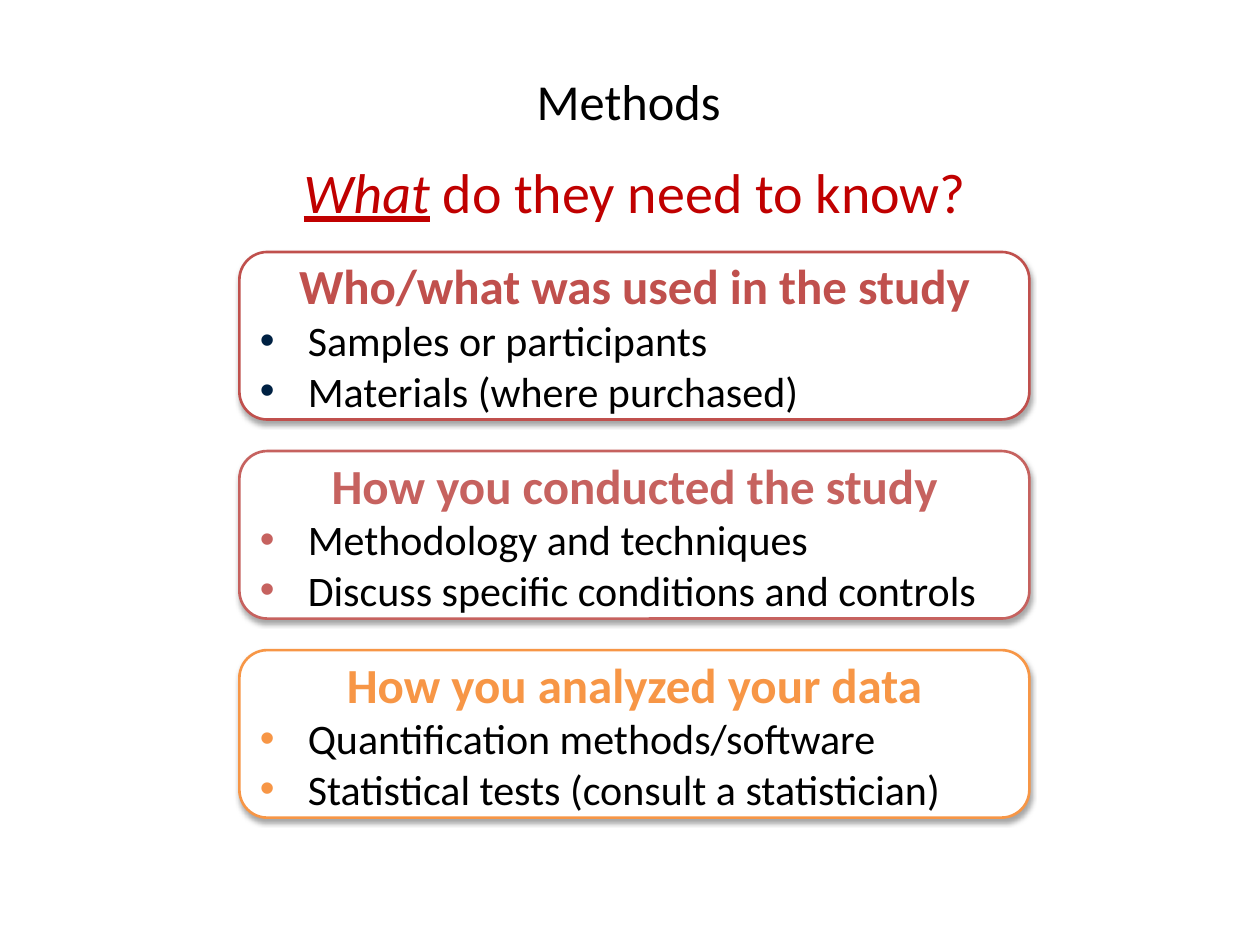
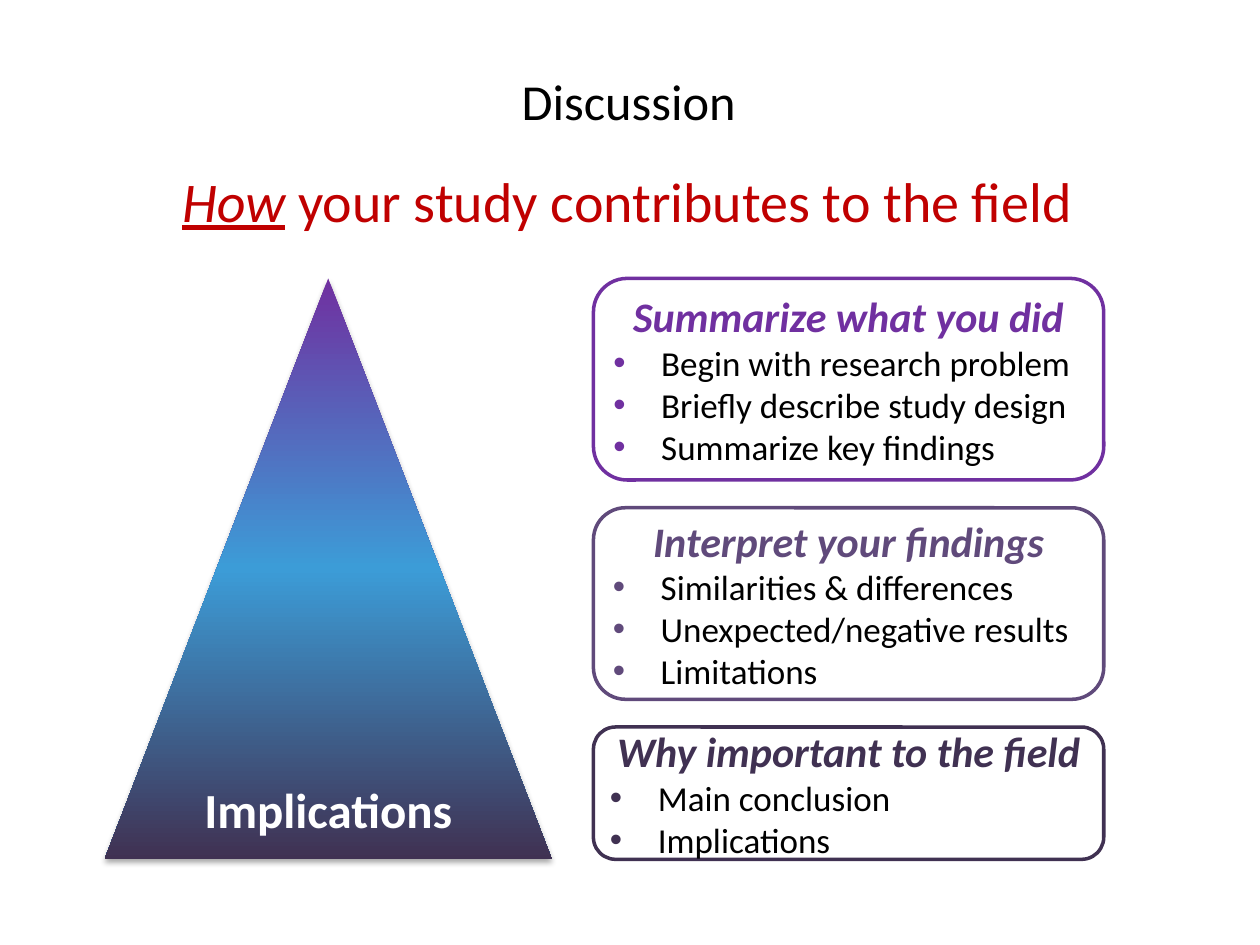
from lxml import etree
from pptx import Presentation
from pptx.dml.color import RGBColor
from pptx.enum.shapes import MSO_SHAPE
from pptx.enum.text import MSO_ANCHOR, PP_ALIGN
from pptx.oxml import parse_xml
from pptx.oxml.ns import nsdecls, qn
from pptx.util import Emu, Inches, Pt

FONT = "Calibri"
BLACK = RGBColor(0x00, 0x00, 0x00)
WHITE = RGBColor(0xFF, 0xFF, 0xFF)
CRIMSON = RGBColor(0xC0, 0x00, 0x00)
NAVY = RGBColor(0x00, 0x21, 0x43)
BRICK = RGBColor(0xC0, 0x50, 0x4D)
ROSE = RGBColor(0xC6, 0x62, 0x5F)
ORANGE = RGBColor(0xF7, 0x96, 0x46)
PURPLE = RGBColor(0x70, 0x30, 0xA0)
SKY = RGBColor(0x3C, 0x9C, 0xD7)
VIOLET = RGBColor(0x60, 0x4A, 0x7B)
PLUM = RGBColor(0x40, 0x31, 0x52)


def add_run(p, text, size, color, bold=False, italic=False, underline=False):
    r = p.add_run()
    r.text = text
    r.font.name, r.font.size = FONT, Pt(size)
    r.font.color.rgb = color
    r.font.bold, r.font.italic, r.font.underline = bold, italic, underline


def set_margins(tf, margin):
    tf.margin_left = tf.margin_right = tf.margin_top = tf.margin_bottom = margin


def add_bullet(p, color):
    pPr = p._p.get_or_add_pPr()
    pPr.set("marL", str(Inches(0.38)))
    pPr.set("indent", str(-Inches(0.38)))
    bu_color = etree.SubElement(pPr, qn("a:buClr"))
    etree.SubElement(bu_color, qn("a:srgbClr"), val=str(color))
    etree.SubElement(pPr, qn("a:buFont"), typeface="Arial")
    etree.SubElement(pPr, qn("a:buChar"), char="•")


def add_shadow(sp):
    effects = sp._element.spPr.find(qn("a:effectLst"))
    effects.append(parse_xml(
        f'<a:outerShdw {nsdecls("a")} blurRad="{Pt(3.1)}" dist="{Pt(1.8)}" '
        'dir="5400000" rotWithShape="0"><a:srgbClr val="000000">'
        '<a:alpha val="35000"/></a:srgbClr></a:outerShdw>'))


def add_titled_slide(prs, title):
    s = prs.slides.add_slide(prs.slide_layouts[5])
    sp = s.shapes.title
    sp.left, sp.top = Inches(0.83), Inches(0.59)
    sp.width, sp.height = Inches(8.32), Inches(0.41)
    tf = sp.text_frame
    tf.vertical_anchor = MSO_ANCHOR.MIDDLE
    p = tf.paragraphs[0]
    p.alignment = PP_ALIGN.CENTER
    add_run(p, title, 28.8, BLACK)
    return s


def add_text_box(s, left, top, width, height):
    """Add a wrapped box and return its centred first paragraph."""
    tf = s.shapes.add_textbox(Inches(left), Inches(top),
                              Inches(width), Inches(height)).text_frame
    tf.word_wrap = True
    p = tf.paragraphs[0]
    p.alignment = PP_ALIGN.CENTER
    return tf, p


def add_question(s, left, top, width, key_word, rest):
    _, p = add_text_box(s, left, top, width, 0.64)
    add_run(p, key_word, 32, CRIMSON, italic=True, underline=True)
    add_run(p, rest, 32, CRIMSON)


def add_card(s, box, heading, items, color, size, line_width,
             bullet_color=None, italic=False, margin=None, shadow=False):
    """Add a rounded card; its heading is 4 pt larger than its items."""
    sp = s.shapes.add_shape(MSO_SHAPE.ROUNDED_RECTANGLE, *map(Inches, box))
    sp.shadow.inherit = False
    if shadow:
        add_shadow(sp)
    sp.fill.solid()
    sp.fill.fore_color.rgb = WHITE
    sp.line.color.rgb = color
    sp.line.width = Pt(line_width)
    tf = sp.text_frame
    tf.word_wrap = True
    tf.vertical_anchor = MSO_ANCHOR.MIDDLE
    if margin is not None:
        set_margins(tf, Inches(margin))
    p = tf.paragraphs[0]
    p.alignment = PP_ALIGN.CENTER
    add_run(p, heading, size + 4, color, bold=True, italic=italic)
    for item in items:
        p = tf.add_paragraph()
        p.alignment = PP_ALIGN.LEFT
        add_bullet(p, bullet_color or color)
        add_run(p, item, size, BLACK)


def add_gradient_triangle(s, left, top, width, height, colors):
    """Add a triangle whose colours run evenly from apex to base."""
    sp = s.shapes.add_shape(MSO_SHAPE.FLOWCHART_EXTRACT, Inches(left),
                            Inches(top), Inches(width), Inches(height))
    sp.shadow.inherit = False
    add_shadow(sp)
    sp.line.fill.background()
    sp.fill.gradient()
    sp.fill.gradient_angle = 270
    stops = sp._element.spPr.find(qn("a:gradFill")).find(qn("a:gsLst"))
    for stop in list(stops):
        stops.remove(stop)
    for i, color in enumerate(colors):
        position = 100000 * i // (len(colors) - 1)
        stop = etree.SubElement(stops, qn("a:gs"), pos=str(position))
        etree.SubElement(stop, qn("a:srgbClr"), val=str(color))


def build_methods(prs):
    s = add_titled_slide(prs, "Methods")
    add_question(s, 2.13, 1.2, 5.82, "What", " do they need to know?")
    cards = [
        ("Who/what was used in the study", BRICK, NAVY,
         ["Samples or participants", "Materials (where purchased)"]),
        ("How you conducted the study", ROSE, ROSE,
         ["Methodology and techniques",
          "Discuss specific conditions and controls"]),
        ("How you analyzed your data", ORANGE, ORANGE,
         ["Quantification methods/software",
          "Statistical tests (consult a statistician)"]),
    ]
    for i, (heading, color, bullet_color, items) in enumerate(cards):
        add_card(s, (1.9, 2 + 1.58 * i, 6.27, 1.33), heading, items, color,
                 24, 1.5, bullet_color=bullet_color, shadow=True)


def build_discussion(prs):
    s = add_titled_slide(prs, "Discussion")
    # Triangle and its label
    add_gradient_triangle(s, 0.83, 2.21, 3.55, 4.61, [PURPLE, SKY, PLUM])
    tf, p = add_text_box(s, 0.83, 6.35, 3.55, 0.69)
    set_margins(tf, Emu(0))
    p.line_spacing, p.space_before = Pt(22), Pt(9)
    add_run(p, "Implications", 28, WHITE, bold=True)

    add_question(s, 1.09, 1.27, 7.78, "How",
                 " your study contributes to the field")
    # Cards stacked with equal gaps
    cards = [
        ("Summarize what you did", PURPLE, 1.6,
         ["Begin with research problem", "Briefly describe study design",
          "Summarize key findings"]),
        ("Interpret your findings", VIOLET, 1.52,
         ["Similarities & differences", "Unexpected/negative results",
          "Limitations"]),
        ("Why important to the field", PLUM, 1.05,
         ["Main conclusion", "Implications"]),
    ]
    top = 2.21
    for heading, color, height, items in cards:
        add_card(s, (4.71, top, 4.05, height), heading, items, color,
                 20, 2, italic=True, margin=0.08)
        top += height + 0.22


def main():
    prs = Presentation()
    prs.slide_width, prs.slide_height = Inches(10), Inches(7.5)
    build_methods(prs)
    build_discussion(prs)
    prs.save("out.pptx")


if __name__ == "__main__":
    main()
